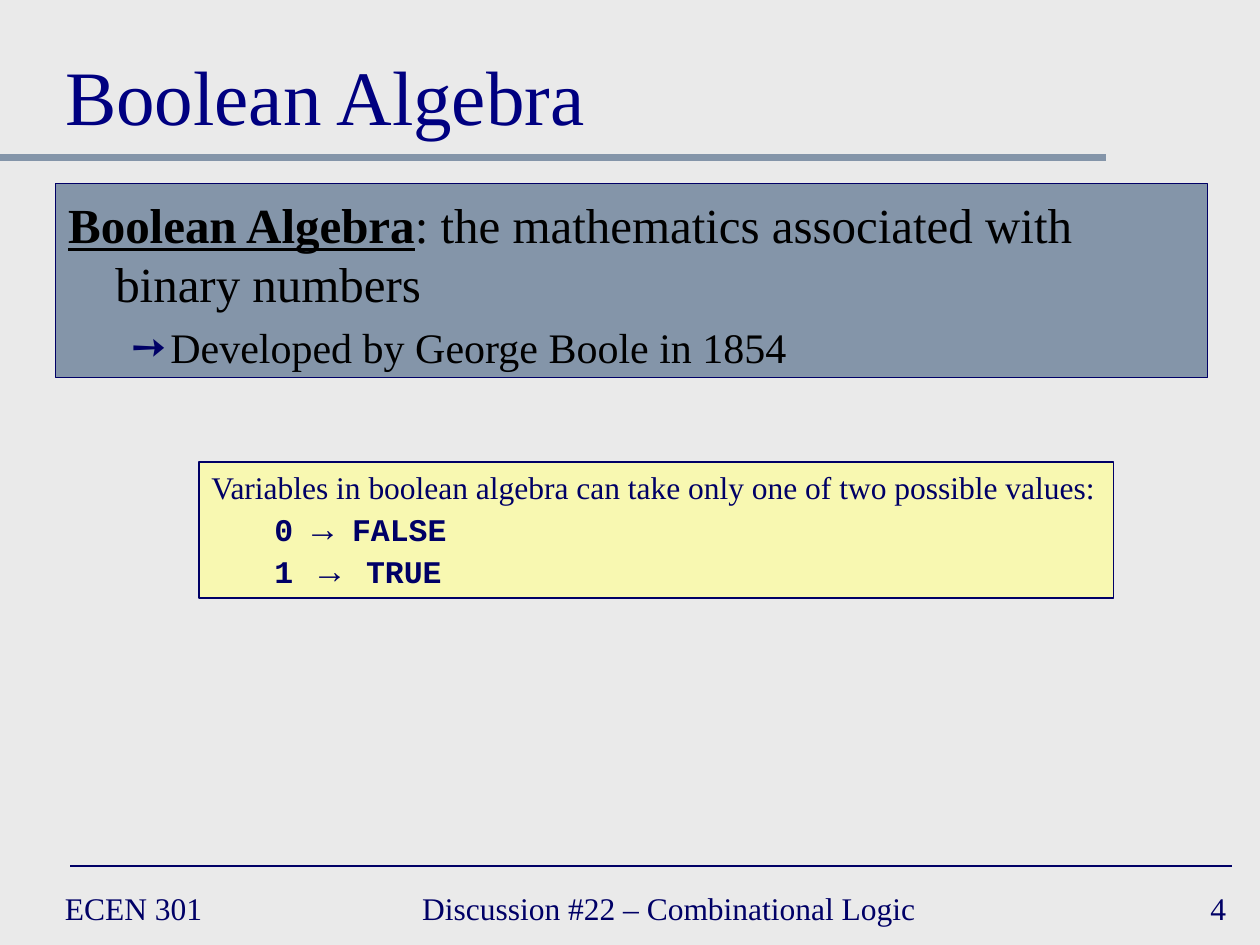
from lxml import etree
from pptx import Presentation
from pptx.dml.color import RGBColor
from pptx.enum.shapes import MSO_CONNECTOR, MSO_SHAPE
from pptx.enum.text import MSO_ANCHOR, MSO_AUTO_SIZE, PP_ALIGN
from pptx.oxml.ns import qn
from pptx.util import Cm, Pt

STRAIGHT = MSO_CONNECTOR.STRAIGHT
RECTANGLE = MSO_SHAPE.RECTANGLE
TOP, MIDDLE, BOTTOM = MSO_ANCHOR.TOP, MSO_ANCHOR.MIDDLE, MSO_ANCHOR.BOTTOM
LEFT, RIGHT = PP_ALIGN.LEFT, PP_ALIGN.RIGHT
NO_AUTOFIT = MSO_AUTO_SIZE.NONE

COLORS = {"background": "EAEAEA", "slate": "8495A9", "navy": "000066",
          "title": "000080", "black": "000000", "note": "FFFF99"}
SERIF, MONO = "Times New Roman", "Courier New"

TITLE = "Boolean Algebra"
DEFINITION = [
    [("Boolean Algebra", 28, True), (": the mathematics associated with binary numbers", 28, False)],
    [("Developed by George Boole in 1854", 24, False)],
]
VALUES = [
    [("Variables in boolean algebra can take only one of two possible values:", 18, SERIF, False)],
    [("\t", 18, SERIF, False), ("0 ", 18, MONO, True), ("→", 20, MONO, True), (" FALSE", 18, MONO, True)],
    [("\t", 18, SERIF, False), ("1 ", 18, MONO, True), ("→", 20, SERIF, True), (" TRUE", 18, MONO, True)],
]
FOOTERS = [
    ("ECEN 301", 1.06, 5.5, LEFT),
    ("Discussion #22 – Combinational Logic", 8.26, 9.74, LEFT),
    ("4", 19.68, 5.29, RIGHT),
]
RULES = [(0, 22.3, 3.18, "slate", 4), (1.42, 24.84, 17.46, "navy", 1)]


def rgb(name):
    return RGBColor.from_string(COLORS[name])


def place(shape, left, top, width, height):
    shape.left, shape.top, shape.width, shape.height = map(Cm, (left, top, width, height))


def set_frame(frame, anchor, wrap):
    frame.auto_size = NO_AUTOFIT
    frame.vertical_anchor = anchor
    frame.word_wrap = wrap


def style(run, size, color, font=SERIF, bold=False):
    run.font.size = Pt(size)
    run.font.name = font
    run.font.bold = bold
    run.font.color.rgb = rgb(color)


def outline(shape, fill, width):
    shape.fill.solid()
    shape.fill.fore_color.rgb = rgb(fill)
    shape.line.color.rgb = rgb("navy")
    shape.line.width = Pt(width)


def paragraphs(frame, lines):
    for index, line in enumerate(lines):
        yield (frame.add_paragraph() if index else frame.paragraphs[0]), line


def indent(paragraph, margin, hanging, bullet=None):
    properties = paragraph._p.get_or_add_pPr()
    properties.set("marL", str(Cm(margin)))
    properties.set("indent", str(-Cm(hanging)))
    if bullet:
        bullet_color = etree.SubElement(properties, qn("a:buClr"))
        etree.SubElement(bullet_color, qn("a:srgbClr"), val=COLORS["navy"])
        etree.SubElement(properties, qn("a:buChar"), char=bullet)
    else:
        etree.SubElement(properties, qn("a:buNone"))


def add_rule(slide, start, end, y, color, width):
    rule = slide.shapes.add_connector(STRAIGHT, Cm(start), Cm(y), Cm(end), Cm(y))
    rule.line.color.rgb = rgb(color)
    rule.line.width = Pt(width)
    etree.SubElement(rule._element.spPr, qn("a:effectLst"))


def add_footer(slide, text, left, width, alignment):
    footer = slide.shapes.add_textbox(Cm(left), Cm(17.78), Cm(width), Cm(1.06))
    set_frame(footer.text_frame, MIDDLE, False)
    paragraph = footer.text_frame.paragraphs[0]
    paragraph.text = text
    paragraph.alignment = alignment
    style(paragraph.runs[0], 18, "navy")


def fill_title(title):
    place(title, 1.06, 0.42, 23.28, 2.54)
    title.text_frame.text = TITLE
    set_frame(title.text_frame, BOTTOM, True)
    paragraph = title.text_frame.paragraphs[0]
    paragraph.alignment = LEFT
    style(paragraph.runs[0], 44, "title")


def fill_definition(body):
    place(body, 1.12, 3.7, 23.22, 3.91)
    outline(body, "slate", 0.75)
    set_frame(body.text_frame, TOP, True)
    body.text_frame.margin_top = Cm(0.23)
    for paragraph, line in paragraphs(body.text_frame, DEFINITION):
        for text, size, is_term in line:
            run = paragraph.add_run()
            run.text = text
            style(run, size, "black", bold=is_term)
            run.font.underline = is_term
    term, origin = body.text_frame.paragraphs
    indent(term, 0.95, 0.95)
    term.space_before = Pt(0)
    origin.level = 1
    indent(origin, 2.06, 0.79, "➙")
    origin.space_before = Pt(5)


def add_values(slide):
    note = slide.shapes.add_shape(RECTANGLE, Cm(4.01), Cm(9.32), Cm(18.44), Cm(2.74))
    note.shadow.inherit = False
    outline(note, "note", 1)
    tint = note._element.spPr.find(qn("a:solidFill"))[0]
    etree.SubElement(tint, qn("a:alpha"), val="70000")
    set_frame(note.text_frame, TOP, False)
    for paragraph, line in paragraphs(note.text_frame, VALUES):
        paragraph.alignment = LEFT
        for text, size, font, bold in line:
            run = paragraph.add_run()
            run.text = text
            style(run, size, "navy", font, bold)


def main():
    deck = Presentation()
    deck.slide_width, deck.slide_height = Cm(25.4), Cm(19.05)
    slide = deck.slides.add_slide(deck.slide_layouts[1])
    slide.background.fill.solid()
    slide.background.fill.fore_color.rgb = rgb("background")
    for rule in RULES:
        add_rule(slide, *rule)
    for footer in FOOTERS:
        add_footer(slide, *footer)
    fill_title(slide.shapes.title)
    fill_definition(slide.placeholders[1])
    add_values(slide)
    deck.save("out.pptx")


if __name__ == "__main__":
    main()
